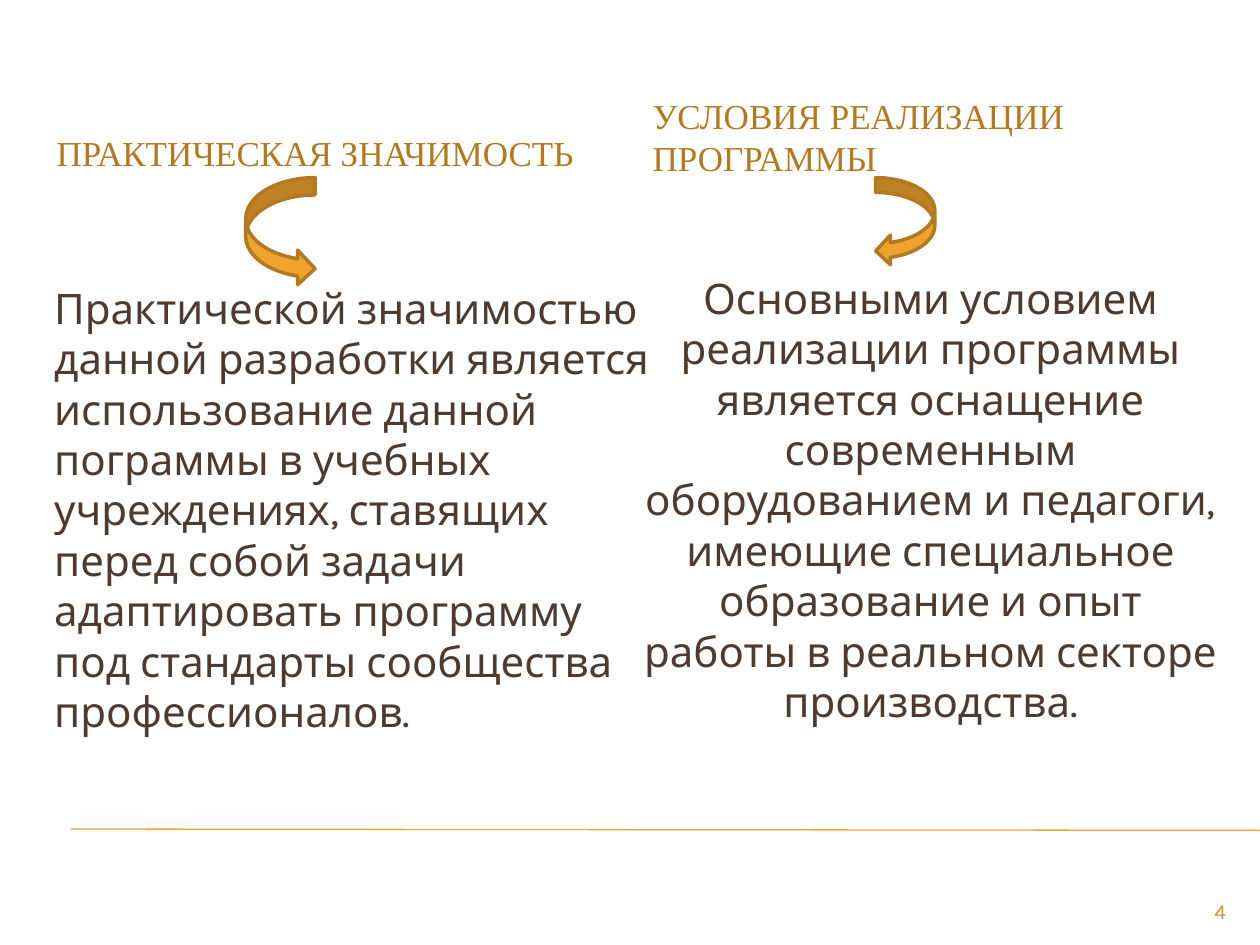
from typing import NamedTuple

from lxml.etree import SubElement
from pptx import Presentation
from pptx.dml.color import RGBColor
from pptx.enum.shapes import MSO_CONNECTOR as CONN, MSO_SHAPE as SHAPE
from pptx.enum.text import MSO_ANCHOR as ANCHOR, MSO_AUTO_SIZE as FIT, PP_ALIGN as ALIGN
from pptx.oxml.ns import qn
from pptx.util import Inches, Pt

COLORS = {"gold": "F0A22E", "bronze": "B27822", "brown": "4E3B30", "number": "D48F29"}
WIDTH, HEIGHT = Inches(10), Inches(7.5)
COMPARISON_LAYOUT = 4


class Box(NamedTuple):
    """Left, top, width and height in percent of the slide."""
    left: float
    top: float
    width: float
    height: float


class Style(NamedTuple):
    font: str
    size: int
    color: str
    anchor: ANCHOR = ANCHOR.TOP


class Block(NamedTuple):
    idx: int
    box: Box
    text: str
    style: Style
    align: ALIGN = ALIGN.LEFT
    inset_top: float = 0.67


class Arrow(NamedTuple):
    kind: SHAPE
    box: Box


HEADING = Style("Times New Roman", 20, "bronze", ANCHOR.MIDDLE)
BODY = Style("Karla", 24, "brown")
NUMBER = Style("Karla", 12, "number")

BLOCKS = [
    Block(1, Box(3.5, 9.33, 44.2, 13.6), "ПРАКТИЧЕСКАЯ ЗНАЧИМОСТЬ", HEADING),
    Block(3, Box(50.8, 9.73, 46.9, 9.33), "УСЛОВИЯ РЕАЛИЗАЦИИ ПРОГРАММЫ", HEADING),
    Block(2, Box(3.3, 29.2, 49.8, 68.13),
          "Практической значимостью данной разработки является использование данной "
          "пограммы в учебных учреждениях, ставящих перед собой задачи адаптировать "
          "программу под стандарты сообщества профессионалов.", BODY),
    Block(4, Box(50, 15.6, 47.7, 60.4),
          "Основными условием реализации программы является оснащение современным "
          "оборудованием и педагоги, имеющие специальное образование и опыт работы "
          "в реальном секторе производства.", BODY, ALIGN.CENTER, 13.2),
]
ARROWS = [
    Arrow(SHAPE.CURVED_RIGHT_ARROW, Box(19.5, 18.8, 5.5, 11.47)),
    Arrow(SHAPE.CURVED_LEFT_ARROW, Box(69.5, 18.8, 4.7, 9.33)),
]


def across(share: float) -> int:
    return round(WIDTH * share / 100)


def down(share: float) -> int:
    return round(HEIGHT * share / 100)


def place(box: Box) -> tuple[int, int, int, int]:
    return across(box.left), down(box.top), across(box.width), down(box.height)


def color(name: str) -> RGBColor:
    return RGBColor.from_string(COLORS[name])


def write(sp, text: str, style: Style, align: ALIGN):
    tf = sp.text_frame
    tf.word_wrap, tf.auto_size, tf.vertical_anchor = True, FIT.NONE, style.anchor
    p = tf.paragraphs[0]
    p.alignment, p.space_before = align, Pt(0)
    r = p.add_run()
    r.text = text
    r.font.name, r.font.size, r.font.bold = style.font, Pt(style.size), False
    r.font.color.rgb = color(style.color)
    return p


def fill_placeholder(slide, block: Block) -> None:
    sp = slide.placeholders[block.idx]
    sp.left, sp.top, sp.width, sp.height = place(block.box)
    sp.text_frame.margin_top = down(block.inset_top)
    pPr = write(sp, block.text, block.style, block.align)._p.get_or_add_pPr()
    pPr.set("marL", "0")
    pPr.set("indent", "0")
    SubElement(pPr, qn("a:buNone"))


def add_arrow(slide, arrow: Arrow) -> None:
    sp = slide.shapes.add_shape(arrow.kind, *place(arrow.box))
    sp.shadow.inherit = False
    sp.fill.solid()
    sp.fill.fore_color.rgb = color("gold")
    sp.line.color.rgb = color("bronze")
    sp.line.width = Pt(2)


def add_rule(slide) -> None:
    line = slide.shapes.add_connector(
        CONN.STRAIGHT, across(5.6), down(87.73), WIDTH, down(87.87))
    line.line.color.rgb = color("gold")
    line.line.width = Pt(0.75)
    SubElement(line._element.spPr, qn("a:effectLst"))


def main() -> None:
    """Build the slide on practical value and conditions of the programme."""
    prs = Presentation()
    prs.slide_width, prs.slide_height = WIDTH, HEIGHT
    slide = prs.slides.add_slide(prs.slide_layouts[COMPARISON_LAYOUT])
    title = slide.shapes.title._element
    title.getparent().remove(title)
    add_rule(slide)
    number = slide.shapes.add_textbox(*place(Box(90, 94.4, 8.3, 3.6)))
    write(number, "4", NUMBER, ALIGN.RIGHT)
    for block in BLOCKS:
        fill_placeholder(slide, block)
    for arrow in ARROWS:
        add_arrow(slide, arrow)
    prs.save("out.pptx")


if __name__ == "__main__":
    main()
